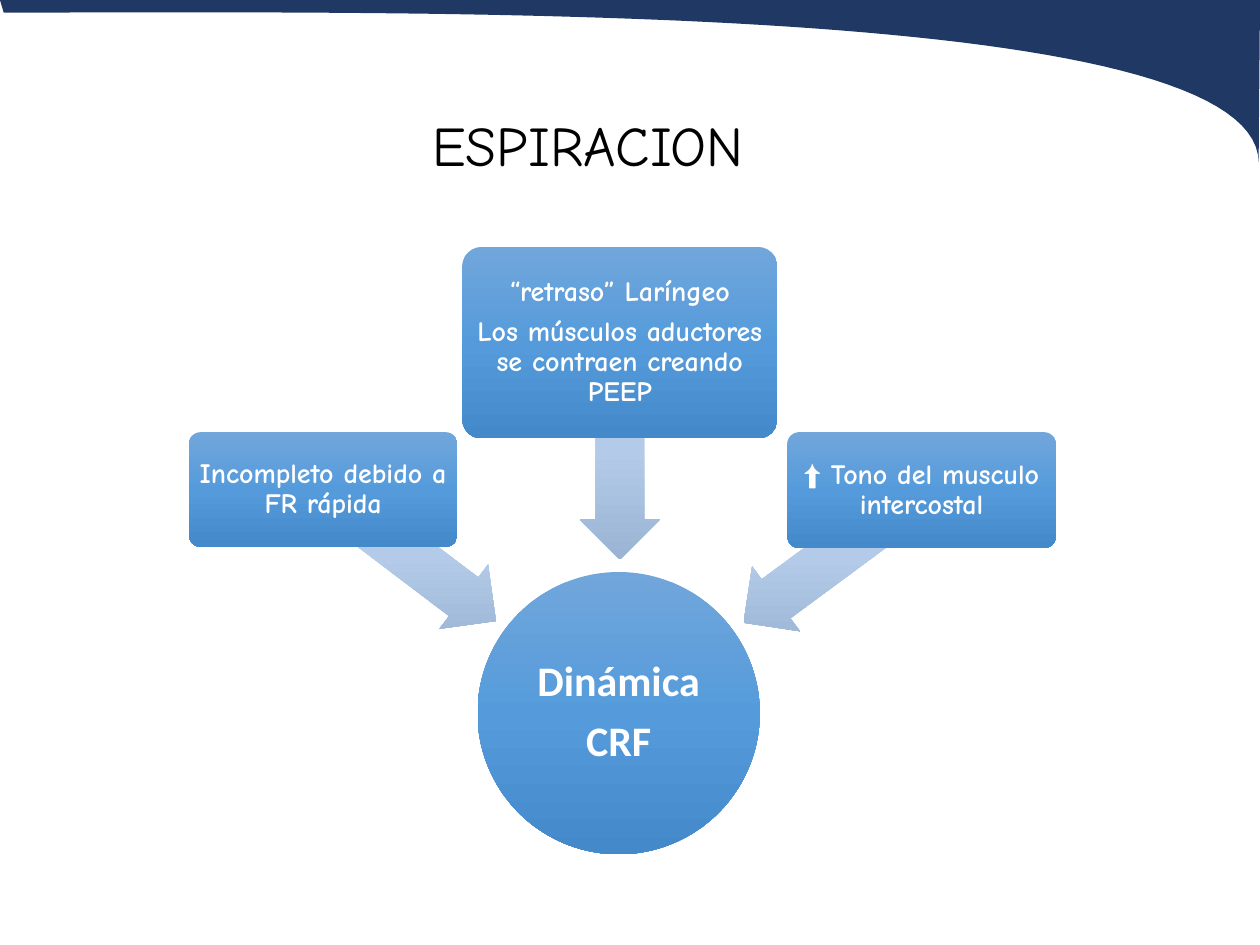
from lxml import etree
from pptx import Presentation
from pptx.dml.color import RGBColor
from pptx.enum.shapes import MSO_SHAPE
from pptx.enum.text import MSO_ANCHOR, MSO_AUTO_SIZE, PP_ALIGN
from pptx.oxml.ns import qn
from pptx.util import Inches, Pt

LEFT, CENTER = PP_ALIGN.LEFT, PP_ALIGN.CENTER
TOP, MIDDLE = MSO_ANCHOR.TOP, MSO_ANCHOR.MIDDLE
ROUND, OVAL, ARROW = MSO_SHAPE.ROUNDED_RECTANGLE, MSO_SHAPE.OVAL, MSO_SHAPE.LEFT_ARROW

TITLE = "ESPIRACION"
FONT = "Comic Neue"
NAVY, WHITE, BLACK = "203864", "FFFFFF", "000000"
BLUES = ["71A6DB", "559BDB", "448ACA"]
PALES = ["C0D2EB", "B3CBE9", "9BB4D3"]
CURVES = [
    [(10, 0), (10, 0.14), (9.99, 1.15), (9.99, 1.29)],
    [(9.99, 1.29), (9.98, 0), (3.36, 0.1), (0.03, 0.1)],
]
HUB = ((3.79, 4.54, 2.24, 2.24), [[("Dinámica", "Calibri")], [("CRF", "Calibri")]])
CAUSES = [
    {"arrow": (2.39, 4.09, 1.72, 0.64), "angle": 217.1, "box": (1.5, 3.43, 2.13, 0.91),
     "text": [[("Incompleto debido a FR rápida", FONT)]]},
    {"arrow": (4.06, 3.26, 1.72, 0.64), "angle": 270, "box": (3.67, 1.96, 2.5, 1.52),
     "text": [[("“retraso” Laríngeo", FONT)],
              [("Los músculos aductores se contraen creando PEEP", FONT)]]},
    {"arrow": (5.73, 4.1, 1.76, 0.64), "angle": 323.6, "box": (6.25, 3.43, 2.13, 0.92),
     "text": [[("⬆", "Arial"), (" Tono del musculo intercostal", FONT)]]},
]


def rgb(value):
    """Turn a hex string into a colour."""
    return RGBColor.from_string(value)


def fill_gradient(sp, colors):
    """Fill a shape from top to bottom, whatever its rotation."""
    sp.fill.gradient()
    grad = sp._element.spPr.find(qn("a:gradFill"))
    grad.set("rotWithShape", "0")
    stops = grad.find(qn("a:gsLst"))
    for stop in list(stops):
        stops.remove(stop)
    for i, color in enumerate(colors):
        stop = etree.SubElement(stops, qn("a:gs"), pos=str(i * 50000))
        etree.SubElement(stop, qn("a:srgbClr"), val=color)
    grad.find(qn("a:lin")).set("ang", "5400000")


def add_shape(s, kind, box, colors, angle=0, adjustments=()):
    """Add a borderless preset shape with a gradient."""
    sp = s.shapes.add_shape(kind, *map(Inches, box))
    sp.shadow.inherit = False
    sp.line.fill.background()
    sp.rotation = angle
    for i, value in enumerate(adjustments):
        sp.adjustments[i] = value
    fill_gradient(sp, colors)
    return sp


def set_text(sp, paragraphs, size, color=WHITE, bold=True, align=CENTER, anchor=MIDDLE,
             inset=(0.03, 0.03), wrap=True, spacing=0.9, after=0.35):
    """Write paragraphs of (text, font) runs into a shape."""
    tf = sp.text_frame
    tf.word_wrap = wrap
    tf.vertical_anchor = anchor
    tf.margin_left = tf.margin_right = Inches(inset[0])
    tf.margin_top = tf.margin_bottom = Inches(inset[1])
    for i, runs in enumerate(paragraphs):
        p = tf.add_paragraph() if i else tf.paragraphs[0]
        p.alignment = align
        p.line_spacing = spacing
        p.space_before = Pt(0)
        p.space_after = Pt(size * after)
        for text, font in runs:
            r = p.add_run()
            r.text = text
            r.font.name = font
            r.font.size = Pt(size)
            r.font.bold = bold
            r.font.color.rgb = rgb(color)


def bezier(points, steps=60):
    """Return points along a cubic curve, without its start."""
    result = []
    for i in range(1, steps + 1):
        t = i / steps
        weights = ((1 - t) ** 3, 3 * t * (1 - t) ** 2, 3 * t * t * (1 - t), t ** 3)
        result.append(tuple(Inches(sum(w * pt[axis] for w, pt in zip(weights, points)))
                            for axis in (0, 1)))
    return result


def add_swoosh(s):
    """Draw the curved band along the top edge."""
    builder = s.shapes.build_freeform(0, 0)
    builder.add_line_segments([(Inches(10), 0)] + [pt for c in CURVES for pt in bezier(c)])
    sp = builder.convert_to_shape()
    sp.shadow.inherit = False
    sp.fill.solid()
    sp.fill.fore_color.rgb = rgb(NAVY)
    sp.line.fill.background()


def main():
    """Build the slide and save it."""
    prs = Presentation()
    prs.slide_width, prs.slide_height = Inches(10), Inches(7.5)
    s = prs.slides.add_slide(prs.slide_layouts[5])
    add_swoosh(s)
    hub_box, hub_text = HUB
    set_text(add_shape(s, OVAL, hub_box, BLUES), hub_text, 24, inset=(0.02, 0.02))
    for cause in CAUSES:
        add_shape(s, ARROW, cause["arrow"], PALES, cause["angle"], (0.6, 0.5))
        box = add_shape(s, ROUND, cause["box"], BLUES, adjustments=(0.1,))
        set_text(box, cause["text"], 16)
    title = s.shapes.title
    title.left, title.top, title.width, title.height = map(Inches, (3.33, 0.83, 3.11, 0.64))
    set_text(title, [[(TITLE, FONT)]], 32, color=BLACK, bold=False, align=LEFT, anchor=TOP,
             inset=(0.1, 0.05), wrap=False, spacing=1.0, after=0)
    title.text_frame.auto_size = MSO_AUTO_SIZE.SHAPE_TO_FIT_TEXT
    prs.save("out.pptx")


if __name__ == "__main__":
    main()
